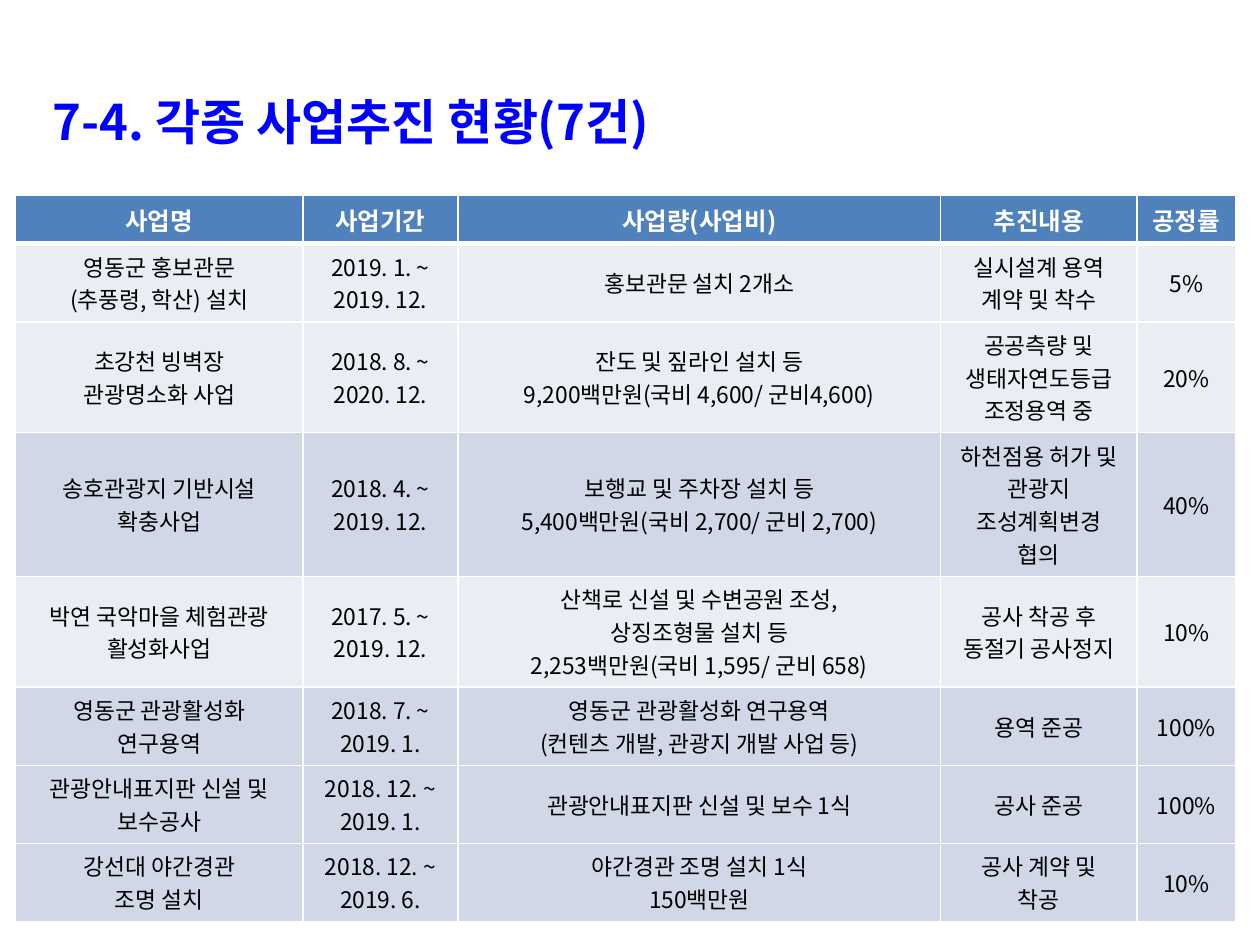
import pptx
import pptx.util
import pptx.dml.color
import pptx.enum.text
import pptx.oxml.ns
import lxml.etree

Pt = pptx.util.Pt
ALIGN = pptx.enum.text.PP_ALIGN
ANCHOR = pptx.enum.text.MSO_ANCHOR
FONT = "Noto Sans CJK KR"
COLORS = {
    "title": "0000FF",
    "header": "4F81BD",
    "light": "E9EDF4",
    "dark": "D0D8E8",
    "white": "FFFFFF",
    "text": "000000",
}


def format_paragraph(paragraph, color, align, **font_values):
    paragraph.alignment = align
    for run in paragraph.runs:
        for name, value in {"name": FONT, **font_values}.items():
            setattr(run.font, name, value)
        run.font.color.rgb = pptx.dml.color.RGBColor.from_string(COLORS[color])
        east_asian = lxml.etree.Element(pptx.oxml.ns.qn("a:ea"), typeface=FONT)
        run.font._element.find(pptx.oxml.ns.qn("a:latin")).addnext(east_asian)


def add_border(cell, side, width):
    """Draw a white line on one side (L, R, T or B) of the cell."""
    properties = cell._tc.get_or_add_tcPr()
    line = lxml.etree.SubElement(
        properties, pptx.oxml.ns.qn(f"a:ln{side}"), w=str(Pt(width)))
    fill = lxml.etree.SubElement(line, pptx.oxml.ns.qn("a:solidFill"))
    lxml.etree.SubElement(fill, pptx.oxml.ns.qn("a:srgbClr"), val=COLORS["white"])


presentation = pptx.Presentation()
presentation.slide_width, presentation.slide_height = Pt(720), Pt(540)
slide = presentation.slides.add_slide(presentation.slide_layouts[5])

# Title
title = slide.shapes.title
title_place = {"left": Pt(23), "top": Pt(31.7), "width": Pt(411), "height": Pt(50.4)}
for name, value in title_place.items():
    setattr(title, name, value)
heading = title.text_frame
heading.text = "7-4. 각종 사업추진 현황(7건)"
heading_format = {
    "word_wrap": False,
    "auto_size": pptx.enum.text.MSO_AUTO_SIZE.NONE,
    "vertical_anchor": ANCHOR.TOP,
}
for name, value in heading_format.items():
    setattr(heading, name, value)
heading.paragraphs[0].line_spacing = 1.5
format_paragraph(heading.paragraphs[0], "title", ALIGN.LEFT, size=Pt(28), bold=True)

# Project table: fill, row height, cell texts
projects = [
    ("header", 26.2, ["사업명", "사업기간", "사업량(사업비)", "추진내용", "공정률"]),
    ("light", 41.8, ["영동군 홍보관문\n(추풍령, 학산) 설치", "2019. 1. ~\n2019. 12.",
                     "홍보관문 설치 2개소", "실시설계 용역 계약 및 착수", "5%"]),
    ("light", 58.3, ["초강천 빙벽장\n관광명소화 사업", "2018. 8. ~\n2020. 12.",
                     "잔도 및 짚라인 설치 등\n9,200백만원(국비 4,600/ 군비4,600)",
                     "공공측량 및\n생태자연도등급\n조정용역 중", "20%"]),
    ("dark", 58.3, ["송호관광지 기반시설\n확충사업", "2018. 4. ~\n2019. 12.",
                    "보행교 및 주차장 설치 등\n5,400백만원(국비 2,700/ 군비 2,700)",
                    "하천점용 허가 및 관광지 조성계획변경 협의", "40%"]),
    ("light", 58.3, ["박연 국악마을 체험관광 활성화사업", "2017. 5. ~ 2019. 12.",
                     "산책로 신설 및 수변공원 조성,\n상징조형물 설치 등\n"
                     "2,253백만원(국비 1,595/ 군비 658)",
                     "공사 착공 후\n동절기 공사정지", "10%"]),
    ("dark", 41.8, ["영동군 관광활성화\n연구용역", "2018. 7. ~\n2019. 1.",
                    "영동군 관광활성화 연구용역\n(컨텐츠 개발, 관광지 개발 사업 등)",
                    "용역 준공", "100%"]),
    ("dark", 41.8, ["관광안내표지판 신설 및 보수공사", "2018. 12. ~\n2019. 1.",
                    "관광안내표지판 신설 및 보수 1식", "공사 준공", "100%"]),
    ("dark", 41.8, ["강선대 야간경관\n조명 설치", "2018. 12. ~\n2019. 6.",
                    "야간경관 조명 설치 1식\n150백만원", "공사 계약 및\n착공", "10%"]),
]
column_widths = [164.2, 88.6, 275.8, 112.3, 56.2]

status = slide.shapes.add_table(
    len(projects), len(column_widths), Pt(8.9), Pt(111.6),
    Pt(sum(column_widths)), Pt(sum(height for _, height, _ in projects))).table
for column, width in zip(status.columns, column_widths):
    column.width = Pt(width)

for row_index, (fill, height, texts) in enumerate(projects):
    status.rows[row_index].height = Pt(height)
    is_header = row_index == 0
    for column_index, text in enumerate(texts):
        cell = status.cell(row_index, column_index)
        cell.text = text
        cell.vertical_anchor = ANCHOR.TOP if is_header else ANCHOR.MIDDLE
        borders = {"L": 1, "R": 1, "T": 3 if row_index == 1 else 1,
                   "B": 3 if is_header else 1}
        for side, border_width in borders.items():
            add_border(cell, side, border_width)
        cell.fill.solid()
        cell.fill.fore_color.rgb = pptx.dml.color.RGBColor.from_string(COLORS[fill])
        for paragraph in cell.text_frame.paragraphs:
            format_paragraph(paragraph, "white" if is_header else "text", ALIGN.CENTER,
                             size=Pt(14 if is_header else 13), bold=is_header)

presentation.save("out.pptx")
